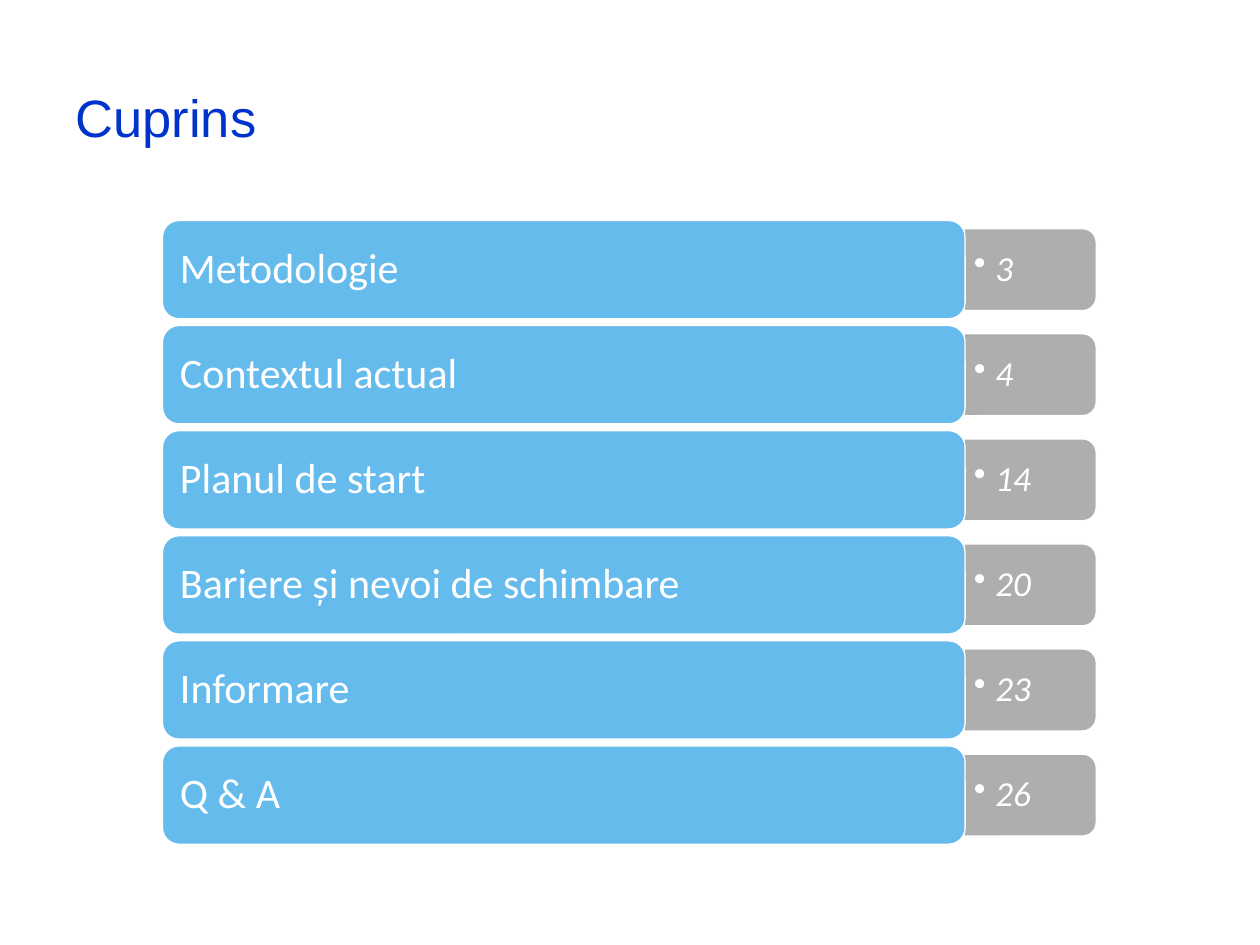
from lxml import etree
from pptx import Presentation
from pptx.dml.color import RGBColor
from pptx.enum.shapes import MSO_SHAPE
from pptx.enum.text import MSO_ANCHOR, PP_ALIGN
from pptx.oxml.ns import qn
from pptx.util import Inches, Pt

BAR_SHAPE = MSO_SHAPE.ROUNDED_RECTANGLE
TAB_SHAPE = MSO_SHAPE.ROUND_2_SAME_RECTANGLE
MIDDLE = MSO_ANCHOR.MIDDLE
LEFT = PP_ALIGN.LEFT

TITLE_BLUE = RGBColor(0x00, 0x33, 0xCC)
BAR_BLUE = RGBColor(0x66, 0xBB, 0xED)
TAB_GREY = RGBColor(0xA6, 0xA6, 0xA6)
WHITE = RGBColor(0xFF, 0xFF, 0xFF)

# The slide is a grid of 100 columns and 75 rows
COLUMNS, ROWS = 100, 75
TITLE_ONLY = 5

CHAPTERS = [
    ("Metodologie", "3"),
    ("Contextul actual", "4"),
    ("Planul de start", "14"),
    ("Bariere și nevoi de schimbare", "20"),
    ("Informare", "23"),
    ("Q & A", "26"),
]
FIRST_TOP, LAST_TOP = 17.5, 59.2
PITCH = (LAST_TOP - FIRST_TOP) / (len(CHAPTERS) - 1)
BAR_LEFT, BAR_WIDTH, BAR_HEIGHT = 12.9, 63.7, 7.8
TAB_LEFT, TAB_WIDTH, TAB_HEIGHT = 76.5, 10.5, 6.5
LABEL_INSET = 0.4
PAGE_WIDTH, PAGE_HEIGHT = 10.2, 5.9


class ContentsSlide:
    heading_font, list_font = "Arial", "Calibri"

    def __init__(self, deck):
        self.column = deck.slide_width / COLUMNS
        self.row = deck.slide_height / ROWS
        self.slide = deck.slides.add_slide(deck.slide_layouts[TITLE_ONLY])
        self.shapes = self.slide.shapes.add_group_shape().shapes

    def place(self, left, top, width, height):
        return (round(left * self.column), round(top * self.row),
                round(width * self.column), round(height * self.row))

    def add_words(self, paragraph, text, font_name, size, color, italic=None):
        paragraph.alignment = LEFT
        run = paragraph.add_run()
        run.text = text
        run.font.name = font_name
        run.font.size = Pt(size)
        run.font.color.rgb = color
        run.font.italic = italic

    def title(self, text, left, top, width, height):
        heading = self.slide.shapes.title
        heading.left, heading.top, heading.width, heading.height = self.place(
            left, top, width, height)
        heading.text_frame.vertical_anchor = MIDDLE
        self.add_words(heading.text_frame.paragraphs[0], text,
                       self.heading_font, 30, TITLE_BLUE)

    def panel(self, preset, color, left, top, width, height):
        panel = self.shapes.add_shape(preset, *self.place(left, top, width, height))
        panel.shadow.inherit = False
        panel.fill.solid()
        panel.fill.fore_color.rgb = color
        panel.line.color.rgb = WHITE
        panel.line.width = Pt(0.75)
        return panel

    def tab(self, left, top, width, height):
        # Swap the sides about the centre, then turn the round corners right
        tab = self.panel(TAB_SHAPE, TAB_GREY, left + (width - height) / 2,
                         top + (height - width) / 2, height, width)
        tab.rotation = 90
        tint = tab._element.spPr.find(qn("a:solidFill"))[0]
        etree.SubElement(tint, qn("a:alpha"), val="90000")

    def caption(self, left, top, width, height):
        box = self.shapes.add_textbox(*self.place(left, top, width, height))
        frame = box.text_frame
        frame.word_wrap = True
        frame.vertical_anchor = MIDDLE
        frame.paragraphs[0].line_spacing = 0.9
        return frame

    def label(self, text, *area):
        frame = self.caption(*area)
        self.add_words(frame.paragraphs[0], text, self.list_font, 24, WHITE)

    def page(self, number, *area):
        frame = self.caption(*area)
        frame.margin_left, frame.margin_right = Inches(0.08), Inches(0.12)
        frame.margin_top = frame.margin_bottom = Inches(0.14)
        paragraph = frame.paragraphs[0]
        paragraph.level = 1
        properties = paragraph._p.get_or_add_pPr()
        properties.set("marL", str(Inches(0.17)))
        properties.set("indent", str(-Inches(0.17)))
        etree.SubElement(properties, qn("a:buChar"), char="•")
        self.add_words(paragraph, number, self.list_font, 20, WHITE, italic=True)


def main():
    deck = Presentation()
    deck.slide_width, deck.slide_height = Inches(10), Inches(7.5)
    contents = ContentsSlide(deck)

    # Heading
    contents.title("Cuprins", 5, 3, 90, 12.5)

    # One bar with a page tab per chapter
    for index, (chapter, number) in enumerate(CHAPTERS):
        top = FIRST_TOP + index * PITCH
        middle = top + BAR_HEIGHT / 2
        contents.tab(TAB_LEFT, middle - TAB_HEIGHT / 2, TAB_WIDTH, TAB_HEIGHT)
        contents.page(number, TAB_LEFT, middle - PAGE_HEIGHT / 2,
                      PAGE_WIDTH, PAGE_HEIGHT)
        contents.panel(BAR_SHAPE, BAR_BLUE, BAR_LEFT, top, BAR_WIDTH, BAR_HEIGHT)
        contents.label(chapter, BAR_LEFT + LABEL_INSET, top + LABEL_INSET,
                       BAR_WIDTH - 2 * LABEL_INSET, BAR_HEIGHT - 2 * LABEL_INSET)

    deck.save("out.pptx")


if __name__ == "__main__":
    main()
